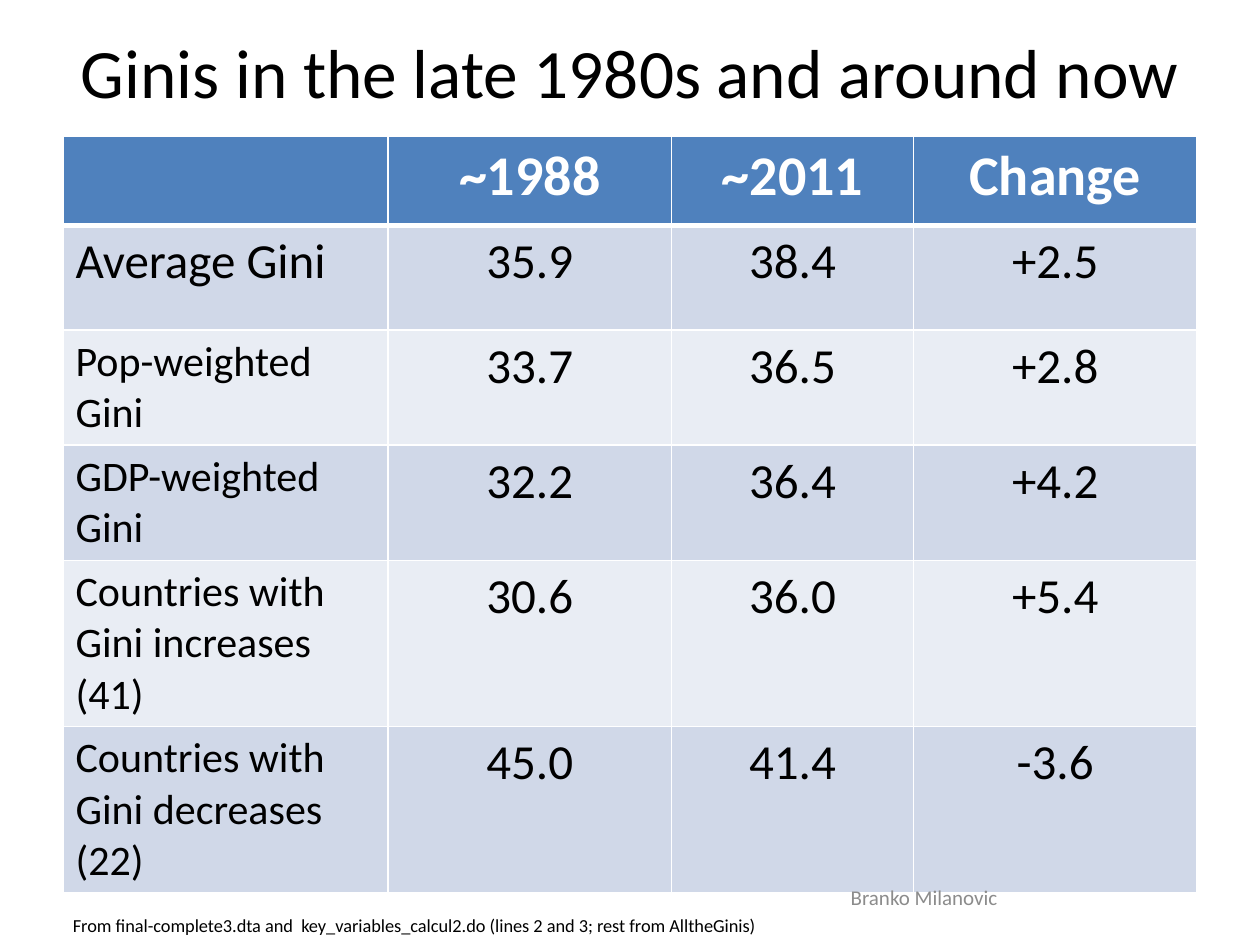
from dataclasses import dataclass

from lxml import etree
from pptx import Presentation
from pptx import util as u
from pptx.dml.color import RGBColor
from pptx.enum import text
from pptx.oxml.ns import qn

SLIDE_WIDTH, SLIDE_HEIGHT = u.Inches(10), u.Inches(7.5)
BLACK = RGBColor(0x00, 0x00, 0x00)
WHITE = RGBColor(0xFF, 0xFF, 0xFF)
GRAY = RGBColor(0x8C, 0x8C, 0x8C)
HEADER_BLUE = RGBColor(0x4F, 0x81, 0xBD)
BANDS = (RGBColor(0xD0, 0xD8, 0xE8), RGBColor(0xE9, 0xED, 0xF4))
LEFT, CENTER = text.PP_ALIGN.LEFT, text.PP_ALIGN.CENTER
TOP, MIDDLE = text.MSO_ANCHOR.TOP, text.MSO_ANCHOR.MIDDLE

COLUMN_WIDTHS = (2.58, 2.25, 1.92, 2.25)
ROW_HEIGHTS = (0.71, 0.83, 0.87, 0.87, 1.25, 1.16)
GINI_ROWS = (
    ("", "~1988", "~2011", "Change"),
    ("Average Gini", "35.9", "38.4", "+2.5"),
    ("Pop-weighted Gini", "33.7", "36.5", "+2.8"),
    ("GDP-weighted Gini", "32.2", "36.4", "+4.2"),
    ("Countries with Gini increases (41)", "30.6", "36.0", "+5.4"),
    ("Countries with Gini decreases (22)", "45.0", "41.4", "-3.6"),
)


@dataclass(frozen=True)
class Box:
    left: float
    top: float
    width: float
    height: float

    def lengths(self) -> tuple:
        return (int(self.left * SLIDE_WIDTH), int(self.top * SLIDE_HEIGHT),
                int(self.width * SLIDE_WIDTH), int(self.height * SLIDE_HEIGHT))


@dataclass(frozen=True)
class Style:
    size: float
    color: RGBColor = BLACK
    bold: bool = False
    alignment: text.PP_ALIGN = LEFT


@dataclass(frozen=True)
class Label:
    wording: str
    box: Box
    style: Style
    anchor: text.MSO_ANCHOR = TOP


TITLE = Label("Ginis in the late 1980s and around now",
              Box(0.05, 0.023, 0.9, 0.104), Style(39.6, alignment=CENTER), MIDDLE)
NOTES = (
    Label("From final-complete3.dta and  key_variables_calcul2.do "
          "(lines 2 and 3; rest from AlltheGinis)",
          Box(0.048, 0.961, 0.658, 0.037), Style(10.5)),
    Label("Branko Milanovic", Box(0.575, 0.923, 0.317, 0.053),
          Style(12, GRAY, alignment=CENTER), MIDDLE),
)
TABLE_BOX = Box(0.05, 0.144, 0.9, 0.76)


def apply(target, values: dict) -> None:
    for name, value in values.items():
        setattr(target, name, value)


def write(frame, wording: str, style: Style) -> None:
    paragraph = frame.paragraphs[0]
    paragraph.alignment = style.alignment
    run = paragraph.add_run()
    run.text = wording
    apply(run.font, {"name": "Calibri", "size": u.Pt(style.size), "bold": style.bold})
    run.font.color.rgb = style.color


def fill_label(shape, label: Label) -> None:
    apply(shape.text_frame, {"word_wrap": True, "vertical_anchor": label.anchor,
                             "auto_size": text.MSO_AUTO_SIZE.NONE})
    write(shape.text_frame, label.wording, label.style)


def add_title(slide, label: Label) -> None:
    shape = slide.shapes.title
    apply(shape, dict(zip(("left", "top", "width", "height"), label.box.lengths())))
    fill_label(shape, label)


def set_border(cell, side: str, points: float, position: int) -> None:
    line = etree.Element(qn(f"a:ln{side}"), w=str(u.Pt(points)))
    fill = etree.SubElement(line, qn("a:solidFill"))
    etree.SubElement(fill, qn("a:srgbClr"), val=str(WHITE))
    cell._tc.get_or_add_tcPr().insert(position, line)


def cell_style(row: int, column: int) -> Style:
    if row == 0:
        return Style(32, WHITE, True, CENTER)
    if column == 0:
        return Style(28 if row == 1 else 24)
    return Style(28, alignment=CENTER)


def add_gini_table(slide) -> None:
    table = slide.shapes.add_table(
        len(ROW_HEIGHTS), len(COLUMN_WIDTHS), *TABLE_BOX.lengths()).table
    for column, width in zip(table.columns, COLUMN_WIDTHS):
        column.width = u.Inches(width)
    for row, height in zip(table.rows, ROW_HEIGHTS):
        row.height = u.Inches(height)
    for r, wordings in enumerate(GINI_ROWS):
        for c, wording in enumerate(wordings):
            cell = table.cell(r, c)
            cell.fill.solid()
            cell.fill.fore_color.rgb = BANDS[(r - 1) % 2] if r else HEADER_BLUE
            widths = {"L": 1, "R": 1, "T": 3 if r == 1 else 1, "B": 1 if r else 3}
            for position, (side, points) in enumerate(widths.items()):
                set_border(cell, side, points, position)
            if wording:
                write(cell.text_frame, wording, cell_style(r, c))


def main() -> None:
    presentation = Presentation()
    apply(presentation, {"slide_width": SLIDE_WIDTH, "slide_height": SLIDE_HEIGHT})
    slide = presentation.slides.add_slide(presentation.slide_layouts[5])
    add_title(slide, TITLE)
    add_gini_table(slide)
    for note in NOTES:
        fill_label(slide.shapes.add_textbox(*note.box.lengths()), note)
    presentation.save("out.pptx")


if __name__ == "__main__":
    main()
